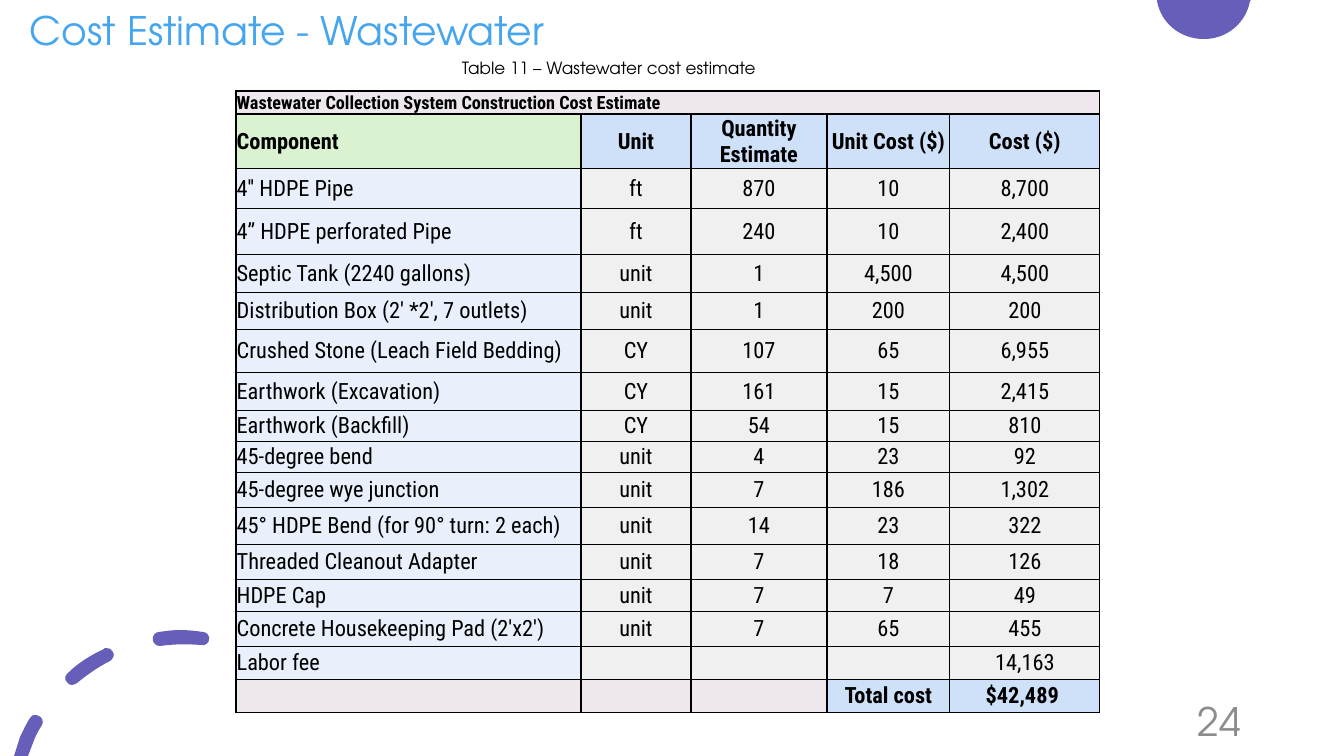
from lxml.etree import SubElement
from pptx import Presentation
from pptx.dml.color import RGBColor
from pptx.enum.text import MSO_ANCHOR, PP_ALIGN
from pptx.oxml.ns import qn
from pptx.util import Emu, Pt

SCALE = 914400 / 100.8
WIDTH, HEIGHT = 1344, 756
PURPLE, BLUE, GRAY, BLACK = "665EB8", "45A5ED", "8C8C8C", "000000"
MAUVE, GREEN, HEADER_BLUE, PALE_BLUE, PALE_GRAY = "EEE8EE", "DAF2D0", "CFE1F8", "E9F0FC", "F0F0F0"

# A contour is a start point, then lines (one point) and curves (two controls and an end).
CORNER_DISC = [
    [(1157, 0), [(1251, 0)], [(1250, 1)], [(1246, 23), (1227, 39), (1204, 39)],
     [(1180, 39), (1161, 23), (1157, 1)]],
]
DASHES = [
    [(36, 715), [(34, 714), (31, 716), (30, 718)], [(26, 724), (23, 731), (20, 737)],
     [(14, 756)], [(28, 756)], [(33, 743)], [(35, 737), (38, 731), (42, 725)],
     [(44, 722), (42, 717), (39, 716)], [(38, 715), (37, 715), (36, 715)]],
    [(106, 648), [(105, 648), (104, 648), (104, 649)], [(91, 655), (78, 663), (68, 673)],
     [(65, 675), (64, 680), (67, 682)], [(68, 684), (70, 685), (72, 685)],
     [(74, 685), (75, 684), (77, 683)], [(87, 675), (98, 667), (110, 661)],
     [(113, 659), (115, 655), (113, 652)], [(112, 649), (109, 648), (106, 648)]],
    [(180, 630), [(173, 630), (166, 631), (159, 632)], [(155, 632), (152, 636), (153, 640)],
     [(153, 643), (156, 646), (160, 646)], [(174, 644), (187, 644), (201, 645)],
     [(205, 646), (209, 643), (209, 640)], [(210, 636), (207, 632), (203, 632)],
     [(196, 631), (188, 630), (180, 630)]],
]

COLUMN_WIDTHS = [345, 110, 136, 123, 150]
ROW_HEIGHTS = [23, 53, 40, 46, 38, 37, 43, 38, 31, 31, 35, 37, 35, 32, 35, 33, 33]
COST_ROWS = [
    ["Wastewater Collection System Construction Cost Estimate", "", "", "", ""],
    ["Component", "Unit", "Quantity Estimate", "Unit Cost ($)", "Cost ($)"],
    ["4'' HDPE Pipe", "ft", "870", "10", "8,700"],
    ["4’’ HDPE perforated Pipe", "ft", "240", "10", "2,400"],
    ["Septic Tank (2240 gallons)", "unit", "1", "4,500", "4,500"],
    ["Distribution Box (2' *2', 7 outlets)", "unit", "1", "200", "200"],
    ["Crushed Stone (Leach Field Bedding)", "CY", "107", "65", "6,955"],
    ["Earthwork (Excavation)", "CY", "161", "15", "2,415"],
    ["Earthwork (Backfill)", "CY", "54", "15", "810"],
    ["45-degree bend", "unit", "4", "23", "92"],
    ["45-degree wye junction", "unit", "7", "186", "1,302"],
    ["45° HDPE Bend (for 90° turn: 2 each)", "unit", "14", "23", "322"],
    ["Threaded Cleanout Adapter", "unit", "7", "18", "126"],
    ["HDPE Cap", "unit", "7", "7", "49"],
    ["Concrete Housekeeping Pad (2'x2')", "unit", "7", "65", "455"],
    ["Labor fee", "", "", "", "14,163"],
    ["", "", "", "Total cost", "$42,489 "],
]
LAST_ROW = len(COST_ROWS) - 1


def px(length):
    """Turn pixels into EMU."""
    return Emu(round(length * SCALE))


def color(code):
    """Turn a hex string into a colour."""
    return RGBColor.from_string(code)


def cell_style(row, column):
    """Return the fill and the boldness of a cost table cell."""
    if row == 0:
        return MAUVE, True
    if row == 1:
        return (HEADER_BLUE if column else GREEN), True
    if row == LAST_ROW:
        return (HEADER_BLUE if column > 2 else MAUVE), True
    return (PALE_GRAY if column else PALE_BLUE), False


class Painter:
    """Holds the style and the current slide."""

    heading_font = "TeX Gyre Adventor"
    table_font = "Roboto Condensed"

    def __init__(self, page):
        """Keep the slide to draw on."""
        self.page = page

    def span(self, para, text, size, code, font, bold=False):
        """Add one run to a paragraph."""
        span = para.add_run()
        span.text = text
        span.font.size = Pt(size)
        span.font.name = font
        span.font.bold = bold
        span.font.color.rgb = color(code)

    def text(self, place, text, size, code, align=PP_ALIGN.LEFT,
             anchor=MSO_ANCHOR.MIDDLE, spacing=None):
        """Add a text box with one line."""
        box = self.page.shapes.add_textbox(*map(px, place))
        box.text_frame.word_wrap = True
        box.text_frame.vertical_anchor = anchor
        para = box.text_frame.paragraphs[0]
        para.alignment = align
        para.line_spacing = spacing
        self.span(para, text, size, code, self.heading_font)

    def outline(self, contours, code):
        """Add one filled shape made of closed contours."""
        builder = self.page.shapes.build_freeform(*map(px, contours[0][0]))
        for number, (start, *segments) in enumerate(contours):
            if number:
                builder.move_to(*map(px, start))
            points = [(px(x), px(y)) for segment in segments for x, y in segment]
            builder.add_line_segments(points, close=True)
        shape = builder.convert_to_shape()
        self.bend(shape, [segment for contour in contours for segment in contour[1:]])
        shape.shadow.inherit = False
        shape.fill.solid()
        shape.fill.fore_color.rgb = color(code)
        shape.line.fill.background()

    def bend(self, shape, segments):
        """Join the three steps of each curved segment into one curve."""
        steps = iter(list(shape._element.iter(qn("a:lnTo"))))
        for segment in segments:
            first, *others = [next(steps) for _ in segment]
            if others:
                curve = first.makeelement(qn("a:cubicBezTo"))
                first.addprevious(curve)
                for step in (first, *others):
                    curve.append(step[0])
                    step.getparent().remove(step)

    def borders(self, cell):
        """Give a cell thin black borders."""
        properties = cell._tc.get_or_add_tcPr()
        for side in ("a:lnL", "a:lnR", "a:lnT", "a:lnB"):
            line = SubElement(properties, qn(side), w=str(Pt(1)))
            fill = SubElement(line, qn("a:solidFill"))
            SubElement(fill, qn("a:srgbClr"), val=BLACK)

    def cell(self, cell, text, size, align, fill, bold):
        """Style and fill in one table cell."""
        self.borders(cell)
        cell.fill.solid()
        cell.fill.fore_color.rgb = color(fill)
        cell.margin_left = cell.margin_right = cell.margin_top = Pt(0.5)
        cell.margin_bottom = 0
        cell.vertical_anchor = MSO_ANCHOR.MIDDLE
        para = cell.text_frame.paragraphs[0]
        para.alignment = align
        if text:
            self.span(para, text, size, BLACK, self.table_font, bold)

    def cost_table(self, left, top):
        """Add the cost table."""
        place = left, top, sum(COLUMN_WIDTHS), sum(ROW_HEIGHTS)
        table = self.page.shapes.add_table(
            len(ROW_HEIGHTS), len(COLUMN_WIDTHS), *map(px, place)).table
        table.first_row = table.horz_banding = False
        for column, width in zip(table.columns, COLUMN_WIDTHS):
            column.width = px(width)
        for row, height in zip(table.rows, ROW_HEIGHTS):
            row.height = px(height)
        for row, texts in enumerate(COST_ROWS):
            for column, text in enumerate(texts):
                align = PP_ALIGN.CENTER if column else PP_ALIGN.LEFT
                self.cell(table.cell(row, column), text, 16 if row else 13, align,
                          *cell_style(row, column))
        table.cell(0, 0).merge(table.cell(0, len(COLUMN_WIDTHS) - 1))


def main():
    """Build and save the deck."""
    deck = Presentation()
    deck.slide_width, deck.slide_height = px(WIDTH), px(HEIGHT)
    painter = Painter(deck.slides.add_slide(deck.slide_layouts[6]))

    painter.outline(CORNER_DISC, PURPLE)
    painter.outline(DASHES, PURPLE)
    painter.text((20, -40, 1159, 146), "Cost Estimate - Wastewater", 28, BLUE, spacing=0.9)
    painter.text((949, 701, 302, 40), "24", 28, GRAY, align=PP_ALIGN.RIGHT)
    painter.cost_table(236, 91)
    painter.text((452, 53, 636, 30), "Table 11 – Wastewater cost estimate", 12, BLACK,
                 anchor=MSO_ANCHOR.TOP)
    deck.save("out.pptx")


main()
